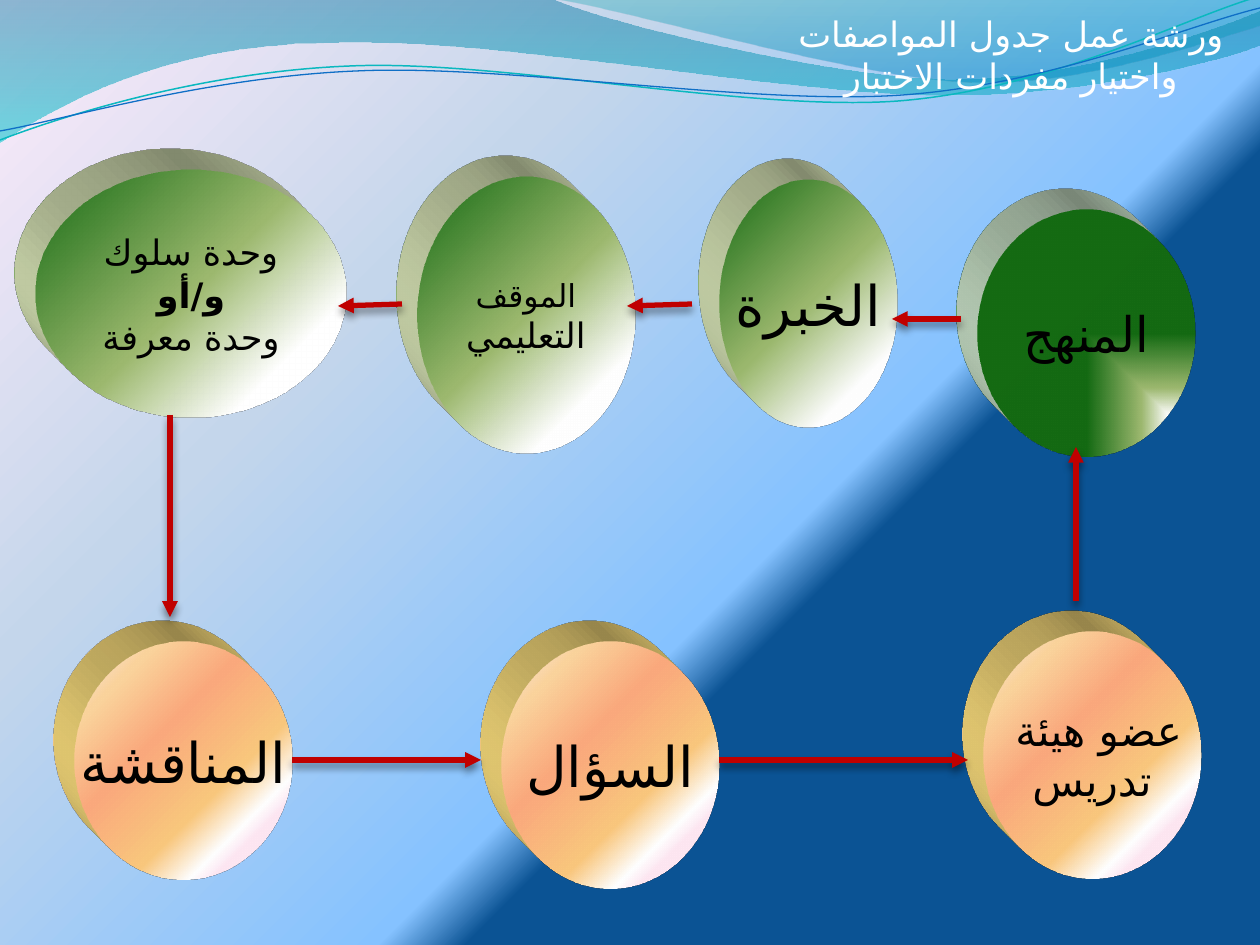
"""Build the workshop slide: a cycle of seven raised ovals joined by red arrows."""
import pptx
import pptx.dml.color
import pptx.enum.shapes
import pptx.enum.text
import pptx.oxml
import pptx.oxml.ns
import pptx.util

RGB = pptx.dml.color.RGBColor
BLACK, WHITE = RGB(0, 0, 0), RGB(255, 255, 255)
RED = RGB(0xC0, 0, 0)
NAVY, SKY = RGB(0x0B, 0x53, 0x94), RGB(0x85, 0xC2, 0xFF)
MIST, BLUSH = RGB(0xC4, 0xD6, 0xEB), RGB(0xFF, 0xEB, 0xFA)
OLIVE, GREEN = RGB(0x9C, 0xB8, 0x6E), RGB(0x15, 0x6B, 0x13)
PINK, GOLD = RGB(0xFE, 0xE7, 0xF2), RGB(0xFA, 0xC7, 0x7D)
CORAL, SAND = RGB(0xFB, 0xA9, 0x7D), RGB(0xFB, 0xD4, 0x9C)
OCEAN, AQUA = RGB(0, 0x74, 0xA1), RGB(0, 0xC6, 0xCF)
LAGOON, AZURE = RGB(0, 0xA1, 0xA9), RGB(0, 0x8B, 0xBF)
TEAL, BLUE = RGB(0x0A, 0xB8, 0xBF), RGB(0x0F, 0x6F, 0xC6)
MOSS_SIDE, GOLD_SIDE = RGB(0xDA, 0xE6, 0xB8), RGB(0xFF, 0xE1, 0x7F)
MINT_SIDE = RGB(0xCB, 0xE2, 0xC8)

BACKDROP = [(36, NAVY), (40, SKY), (70, MIST), (100, BLUSH)]
PEACH = [(18, PINK), (23, WHITE), (36, GOLD), (61, CORAL), (82, SAND), (100, PINK)]
CORNER = ('<a:path path="{}"><a:fillToRect l="100000" t="100000"/></a:path>'
          '<a:tileRect r="-100000" b="-100000"/>')
DOWN = '<a:lin ang="5400000" scaled="0"/>'


def leaf(white_end):
    return [(white_end, WHITE), (50, OLIVE), (100, GREEN)]


class Deck:
    """Hold the style, the presentation and the current slide."""

    font, arabic_font = "TeX Gyre Pagella", "DejaVu Sans"
    scale = 914400 / 126

    def __init__(self, width, height):
        self.prs = pptx.Presentation()
        self.prs.slide_width, self.prs.slide_height = self.emu(width, height)
        self.s = self.prs.slides.add_slide(self.prs.slide_layouts[5])

    def emu(self, *lengths):
        return [pptx.util.Emu(round(n * self.scale)) for n in lengths]

    def xml(self, tag, inner="", attrs=""):
        ns = pptx.oxml.ns.nsdecls("a")
        return pptx.oxml.parse_xml(f"<a:{tag} {ns} {attrs}>{inner}</a:{tag}>")

    def gradient(self, fill, owner, stops, direction):
        fill.solid()
        fill.fore_color.rgb = WHITE
        gs = ""
        for pos, color, *alpha in stops:
            clear = f'<a:alpha val="{alpha[0] * 1000}"/>' if alpha else ""
            gs += f'<a:gs pos="{pos * 1000}"><a:srgbClr val="{color}">{clear}</a:srgbClr></a:gs>'
        solid = owner.find(pptx.oxml.ns.qn("a:solidFill"))
        owner.replace(solid, self.xml("gradFill", f"<a:gsLst>{gs}</a:gsLst>{direction}",
                                      'rotWithShape="1"'))

    def background(self, stops):
        fill = self.s.background.fill
        fill.solid()
        owner = self.s.element.find(".//" + pptx.oxml.ns.qn("p:bgPr"))
        self.gradient(fill, owner, stops, CORNER.format("circle"))

    def style(self, p, size, color, bold=False):
        p.alignment = pptx.enum.text.PP_ALIGN.CENTER
        for r in p.runs:
            r.font.name, r.font.size = self.font, pptx.util.Pt(size)
            r.font.bold, r.font.color.rgb = bold, color
            r.font._element.append(self.xml("cs", attrs=f'typeface="{self.arabic_font}"'))

    def title(self, text, box):
        sp = self.s.shapes.title
        sp._element.getparent().append(sp._element)
        sp.left, sp.top, sp.width, sp.height = self.emu(*box)
        tf = sp.text_frame
        tf.text = text
        tf.word_wrap = True
        tf.auto_size = pptx.enum.text.MSO_AUTO_SIZE.SHAPE_TO_FIT_TEXT
        tf.vertical_anchor = pptx.enum.text.MSO_ANCHOR.TOP
        self.style(tf.paragraphs[0], 20, WHITE)

    def wave(self, start, pieces, stops=None, line=None, weight=0):
        pen = self.s.shapes.build_freeform(*start, scale=self.scale)
        pen.add_line_segments([pt for piece in pieces for pt in piece], close=bool(stops))
        sp = pen.convert_to_shape()
        sp.shadow.inherit = False
        corners = iter(sp._element.findall(".//" + pptx.oxml.ns.qn("a:lnTo")))
        for piece in pieces:
            first, *others = [next(corners) for _ in piece]
            if others:
                curve = self.xml("cubicBezTo")
                first.getparent().replace(first, curve)
                for corner in (first, *others):
                    curve.append(corner[0])
                for corner in others:
                    corner.getparent().remove(corner)
        if stops:
            self.gradient(sp.fill, sp._element.spPr, stops, DOWN)
            sp.line.fill.background()
        else:
            sp.fill.background()
            sp.line.color.rgb, sp.line.width = line, pptx.util.Pt(weight)

    def oval(self, box, lines, stops, side, path="circle", rtl=True, bold=None):
        sp = self.s.shapes.add_shape(pptx.enum.shapes.MSO_SHAPE.OVAL, *self.emu(*box))
        sp.shadow.inherit = False
        sp.line.fill.background()
        pr = sp._element.spPr
        self.gradient(sp.fill, pr, stops, CORNER.format(path))
        pr.append(self.xml("scene3d", '<a:camera prst="legacyObliqueTopLeft"/>'
                                      '<a:lightRig rig="legacyFlat3" dir="b"/>'))
        pr.append(self.xml("sp3d", f'<a:extrusionClr><a:srgbClr val="{side}"/></a:extrusionClr>',
                           'extrusionH="430200" prstMaterial="legacyMatte"'))
        tf = sp.text_frame
        tf.word_wrap = False
        tf.vertical_anchor = pptx.enum.text.MSO_ANCHOR.MIDDLE
        tf.text = "\n".join(text for text, _ in lines)
        for i, (p, (_, size)) in enumerate(zip(tf.paragraphs, lines)):
            self.style(p, size, BLACK, i == bold)
            if rtl:
                p._p.get_or_add_pPr().set("rtl", "1")

    def arrow(self, *ends):
        kind = pptx.enum.shapes.MSO_CONNECTOR.STRAIGHT
        c = self.s.shapes.add_connector(kind, *self.emu(*ends))
        c.line.color.rgb, c.line.width = RED, pptx.util.Pt(3)
        c.line._get_or_add_ln().append(self.xml("tailEnd", attrs='type="triangle"'))
        c._element.spPr.append(self.xml(
            "effectLst", '<a:outerShdw blurRad="57150" dist="38100" dir="5400000" rotWithShape="0">'
            '<a:srgbClr val="000000"><a:alpha val="48000"/></a:srgbClr></a:outerShdw>'))


def main():
    deck = Deck(1260, 945)
    deck.background(BACKDROP)
    deck.wave((0, 0), [
        [(554, 0)], [(600, 21), (837, 79), (955, 79)], [(1074, 79), (1207, 33), (1260, 11)],
        [(1260, 45)], [(1239, 55), (1096, 96), (940, 95)], [(784, 95), (481, 35), (324, 43)],
        [(163, 45), (58, 105), (0, 142)]], [(0, OCEAN, 45), (100, AQUA, 55)])
    deck.wave((558, 0), [
        [(641, 14), (859, 78), (969, 82)], [(1079, 87), (1211, 40), (1260, 26)],
        [(1260, 0)]], [(0, LAGOON, 30), (80, AZURE, 45)])
    deck.wave((0, 140), [
        [(60, 117), (199, 72), (349, 66)], [(498, 59), (747, 112), (898, 101)],
        [(1050, 89), (1182, 19), (1257, -3)]], line=TEAL, weight=0.85)
    deck.wave((0, 131), [
        [(59, 121), (207, 77), (357, 71)], [(508, 64), (752, 106), (903, 95)],
        [(1053, 84), (1186, 26), (1260, 8)]], line=BLUE, weight=0.75)

    deck.oval((977, 209, 218, 248), [("المنهج", 28)], leaf(25), MINT_SIDE, path="rect")
    for box, lines in [
        ((501, 641, 218, 248), [("السؤال", 32)]),
        ((74, 642, 218, 238), [("المناقشة", 32)]),
        ((983, 631, 218, 248), [("عضو هيئة ", 24), ("تدريس", 24)]),
    ]:
        deck.oval(box, lines, PEACH, GOLD_SIDE)
    deck.oval((719, 180, 179, 248), [("الخبرة", 32)], leaf(19), MOSS_SIDE)
    deck.oval((417, 177, 218, 277), [("الموقف", 18), ("التعليمي", 20)], leaf(21), MOSS_SIDE,
              rtl=False)
    deck.oval((35, 170, 312, 248), [("وحدة سلوك", 20), ("و/أو", 20), ("وحدة معرفة", 20)],
              leaf(21), MOSS_SIDE, bold=1)

    for ends in [(961, 319, 892, 319), (692, 304, 627, 306), (170, 415, 170, 617),
                 (292, 760, 481, 760), (719, 760, 968, 760), (1076, 601, 1076, 447),
                 (402, 304, 338, 306)]:
        deck.arrow(*ends)
    deck.title("ورشة عمل جدول المواصفات واختيار مفردات الاختبار", (762, 6, 498, 55))
    deck.prs.save("out.pptx")


if __name__ == "__main__":
    main()
